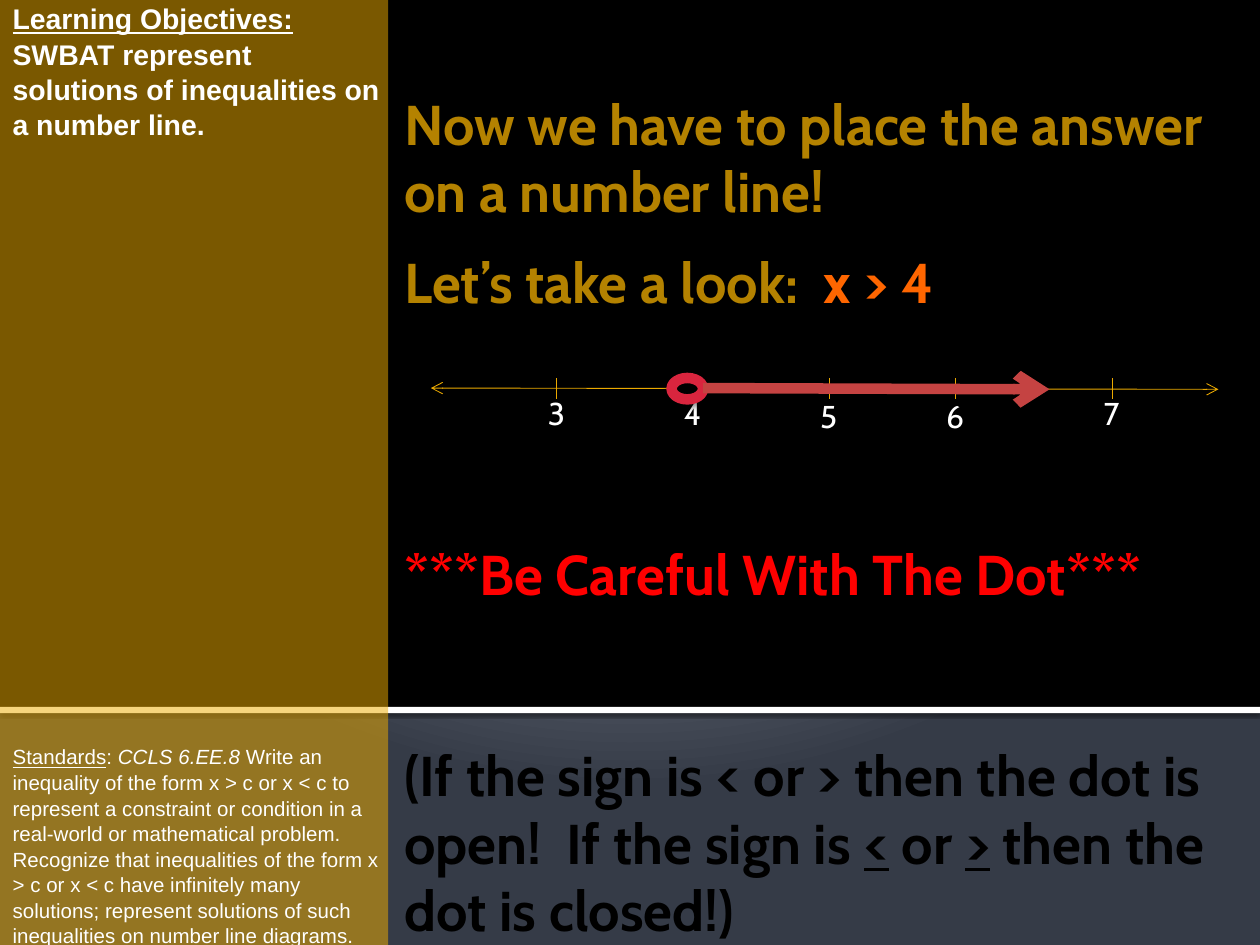
from dataclasses import dataclass

from lxml import etree
from pptx import Presentation
from pptx import util as u
from pptx.dml.color import RGBColor
from pptx.enum import shapes, text
from pptx.oxml import ns, parse_xml

Inches, Pt = u.Inches, u.Pt


@dataclass(frozen=True)
class Theme:
    black: str = "000000"
    white: str = "FFFFFF"
    gold: str = "F0AD00"
    axis: str = "EBA900"
    prose: str = "B48200"
    orange: str = "FF6600"
    red: str = "FF0000"
    ring: str = "D9253E"
    ray: str = "C54342"
    pale: str = "C1C5D3"
    haze: str = "BFC4D2"
    slate: str = "353B47"
    side: str = "Arial"
    body: str = "Cabin"
    goal: float = 16.2
    note: float = 11.7
    big: float = 32
    label: float = 18


T = Theme()


def rgb(code):
    return RGBColor.from_string(code)


def sub(parent, tag, **attrs):
    return etree.SubElement(parent, ns.qn(tag), **attrs)


def write(par, words, size, color, face, bold=False, italic=False, under=False):
    """Add one formatted run to a paragraph."""
    run = par.add_run()
    run.text = words
    font = run.font
    font.size, font.name = Pt(size), face
    font.bold, font.italic, font.underline = bold, italic, under
    font.color.rgb = rgb(color)


def frame(shape, anchor, left=0.1, top=0.05, right=0.1, wrap=True):
    """Set the margins and anchor of a text frame, and return it."""
    tf = shape.text_frame
    tf.auto_size = text.MSO_AUTO_SIZE.NONE
    tf.word_wrap, tf.vertical_anchor = wrap, anchor
    tf.margin_left, tf.margin_right = Inches(left), Inches(right)
    tf.margin_top = tf.margin_bottom = Inches(top)
    return tf


def fill_par(par, runs, before=0, **base):
    """Fill a left-aligned paragraph with (words, changes) pairs."""
    par.alignment = text.PP_ALIGN.LEFT
    par.space_before = Pt(before)
    for words, diff in runs:
        write(par, words, **{**base, **diff})


def shade(shape, alpha, blur, dist):
    """Give a shape a soft shadow straight below it."""
    fx = shape._element.spPr.find(ns.qn("a:effectLst"))
    glow = sub(fx, "a:outerShdw", blurRad=str(Pt(blur)), dist=str(Pt(dist)),
               dir="5400000", algn="ctr", rotWithShape="0")
    tone = sub(glow, "a:srgbClr", val=T.black)
    sub(tone, "a:alpha", val=str(alpha * 1000))


def block(slide, kind, box, fill):
    shape = slide.shapes.add_shape(kind, *map(Inches, box))
    shape.shadow.inherit = False
    shape.fill.solid()
    shape.fill.fore_color.rgb = rgb(fill)
    shape.line.fill.background()
    return shape


def rule(slide, start, end, color, width, head=False, tail=False):
    line = slide.shapes.add_connector(
        shapes.MSO_CONNECTOR.STRAIGHT, *map(Inches, start + end))
    line.line.color.rgb = rgb(color)
    line.line.width = Pt(width)
    for tag, on in (("a:headEnd", head), ("a:tailEnd", tail)):
        if on:
            sub(line.line._get_or_add_ln(), tag, type="arrow")
    sub(line._element.spPr, "a:effectLst")


def backdrop(slide):
    """Radial gradient behind everything."""
    slide.background.fill.solid()
    props = slide._element.find(".//" + ns.qn("p:bgPr"))
    stops = ((0, T.pale), (12, T.pale), (20, T.haze), (100, T.slate))
    marks = "".join(f'<a:gs pos="{p * 1000}"><a:srgbClr val="{c}"/></a:gs>'
                    for p, c in stops)
    grad = parse_xml(
        f'<a:gradFill {ns.nsdecls("a")} rotWithShape="1"><a:gsLst>{marks}</a:gsLst>'
        '<a:path path="circle"><a:fillToRect l="10000" t="-25000" r="10000"'
        ' b="125000"/></a:path></a:gradFill>')
    props.replace(props.find(ns.qn("a:solidFill")), grad)


def sidebar(slide):
    """Translucent title panel with the objective and the standard."""
    panel = slide.shapes.title
    slide.shapes._spTree.append(panel._element)
    panel.left, panel.top = Inches(0), Inches(0)
    panel.width, panel.height = Inches(3.08), Inches(7.5)
    panel.fill.solid()
    panel.fill.fore_color.rgb = rgb(T.gold)
    tone = panel._element.spPr.find(".//" + ns.qn("a:srgbClr"))
    sub(tone, "a:alpha", val="51000")

    tf = frame(panel, text.MSO_ANCHOR.TOP, top=0, right=0.05)
    goal, note = tf.paragraphs[0], tf.add_paragraph()
    goal.line_spacing = note.line_spacing = 1.04
    look = dict(color=T.white, face=T.side)
    fill_par(goal, [
        ("Learning Objectives: ", dict(under=True)),
        ("SWBAT represent solutions of inequalities on a number line.", {}),
    ], size=T.goal, bold=True, **look)
    fill_par(note, [
        ("Standards", dict(under=True)),
        (": ", {}),
        ("CCLS 6.EE.8 ", dict(italic=True)),
        ("Write an inequality of the form x > c or x < c to represent a "
         "constraint or condition in a real-world or mathematical problem. "
         "Recognize that inequalities of the form x > c or x < c have "
         "infinitely many solutions; represent solutions of such "
         "inequalities on number line diagrams.", {}),
    ], before=344, size=T.note, **look)


def lesson(slide):
    """Main text, set from the bottom up."""
    box = slide.shapes.add_textbox(*map(Inches, (3.08, 0, 6.92, 7.48)))
    tf = frame(box, text.MSO_ANCHOR.BOTTOM, left=0.13, top=0, right=0.05)
    line = dict(under=True)
    parts = [
        (0, T.prose, [("Now we have to place the answer on a number line!", {})]),
        (13.2, T.prose, [("Let’s take a look:  ", {}),
                         ("x > 4", dict(color=T.orange))]),
        (128.4, T.red, [("***Be Careful With The Dot***", {})]),
        (76.8, T.black, [
            ("(If the sign is < or > then the dot is open!  If the sign is ", {}),
            ("<", line), (" or ", {}), (">", line),
            (" then the dot is closed!)", {})]),
    ]
    for i, (gap, color, runs) in enumerate(parts):
        par = tf.add_paragraph() if i else tf.paragraphs[0]
        fill_par(par, runs, before=gap, size=T.big, color=color,
                 face=T.body, bold=True)


def axis(slide):
    """Number line with the open dot and ray for x > 4."""
    rule(slide, (3.42, 3.08), (9.67, 3.09), T.axis, 0.5, head=True, tail=True)
    ticks = {"3": (4.42, 3.08), "4": (5.5, 3.08), "5": (6.58, 3.1),
             "6": (7.58, 3.1), "7": (8.83, 3.08)}
    for x, _ in ticks.values():
        rule(slide, (x, 3), (x, 3.17), T.axis, 0.5)
    for digit, (x, y) in ticks.items():
        box = slide.shapes.add_textbox(
            *map(Inches, (x - 0.17, y, 0.25, 0.4)))
        tf = frame(box, text.MSO_ANCHOR.TOP, wrap=False)
        fill_par(tf.paragraphs[0], [(digit, {})], size=T.label,
                 color=T.white, face=T.body)
    dot = block(slide, shapes.MSO_SHAPE.OVAL, (5.33, 3, 0.25, 0.17), T.black)
    dot.line.color.rgb = rgb(T.ring)
    dot.line.width = Pt(6)
    shade(dot, 38, 3.1, 2)
    rule(slide, (5.58, 3.08), (8.33, 3.09), T.ray, 6, tail=True)


def main():
    deck = Presentation()
    deck.slide_width, deck.slide_height = Inches(10), Inches(7.5)
    slide = deck.slides.add_slide(deck.slide_layouts[5])
    backdrop(slide)
    # Dark field and white divider
    rect = shapes.MSO_SHAPE.RECTANGLE
    block(slide, rect, (0, 0, 10, 5.62), T.black)
    shade(block(slide, rect, (0, 5.61, 10, 0.05), T.white), 60, 2.5, 0.8)
    sidebar(slide)
    lesson(slide)
    axis(slide)
    deck.save("out.pptx")


if __name__ == "__main__":
    main()
